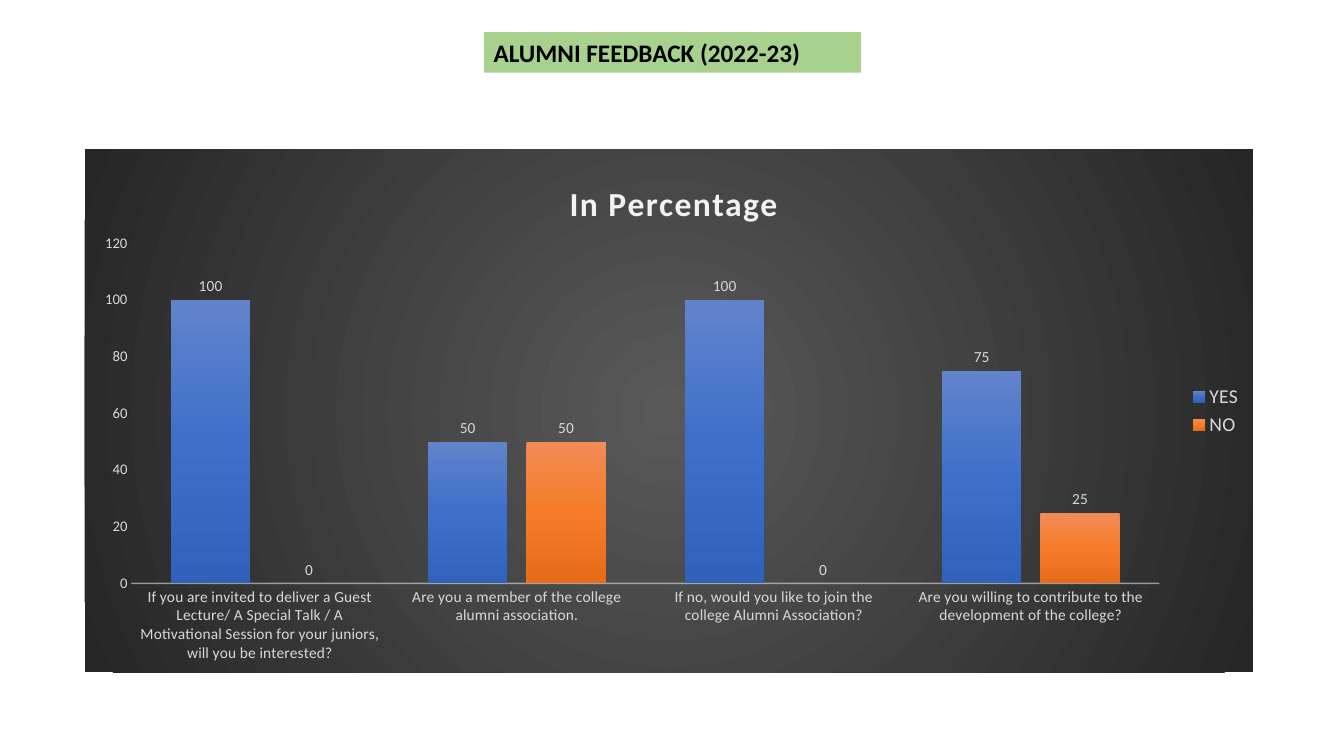
from pptx import Presentation
from pptx.chart.data import CategoryChartData
from pptx.dml.color import RGBColor
from pptx.enum.chart import XL_CHART_TYPE as ChartType, XL_LABEL_POSITION as LabelPos
from pptx.enum.chart import XL_LEGEND_POSITION as LegendPos, XL_TICK_MARK as Tick
from pptx.enum.shapes import MSO_SHAPE as Shape
from pptx.enum.text import MSO_ANCHOR as Anchor, MSO_AUTO_SIZE as AutoSize, PP_ALIGN as Align
from pptx.oxml import parse_xml
from pptx.oxml.ns import nsdecls
from pptx.util import Pt

BLACK = RGBColor(0x00, 0x00, 0x00)
GREEN = RGBColor(0xA9, 0xD1, 0x8E)
LIGHT = RGBColor(0xD9, 0xD9, 0xD9)
PALE = RGBColor(0xF2, 0xF2, 0xF2)
GREY = RGBColor(0x59, 0x59, 0x59)
DARK = RGBColor(0x26, 0x26, 0x26)
BLUES = (RGBColor(0x61, 0x83, 0xCB), RGBColor(0x3E, 0x70, 0xCA), RGBColor(0x30, 0x62, 0xBB))
ORANGES = (RGBColor(0xF1, 0x8C, 0x57), RGBColor(0xF6, 0x7B, 0x28), RGBColor(0xE5, 0x6C, 0x19))

LINEAR = '<a:lin ang="5400000" scaled="0"/>'
RADIAL = '<a:path path="circle"><a:fillToRect l="50000" t="50000" r="50000" b="50000"/></a:path>'

QUESTIONS = (
    "If you are invited to deliver a Guest Lecture/ A Special Talk / A Motivational Session "
    "for your juniors, will you be interested?",
    "Are you a member of the college alumni association.",
    "If no, would you like to join the college Alumni Association?",
    "Are you willing to contribute to the development of the college?",
)
ANSWERS = (
    ("YES", (100, 50, 100, 75), BLUES),
    ("NO", (0, 50, 0, 25), ORANGES),
)


def gradient(colors, direction):
    step = 100000 // (len(colors) - 1)
    stops = "".join(
        f'<a:gs pos="{i * step}"><a:srgbClr val="{c}"/></a:gs>' for i, c in enumerate(colors)
    )
    return parse_xml(
        f'<a:gradFill {nsdecls("a")} rotWithShape="1"><a:gsLst>{stops}</a:gsLst>{direction}</a:gradFill>'
    )


def set_layout(parent, index, **values):
    for old in parent.xpath("c:layout"):
        parent.remove(old)
    target = '<c:layoutTarget val="inner"/>' if "w" in values else ""
    modes = "".join(f'<c:{k}Mode val="edge"/>' for k in "xy")
    sizes = "".join(f'<c:{k} val="{v}"/>' for k, v in values.items())
    parent.insert(index, parse_xml(
        f'<c:layout {nsdecls("c")}><c:manualLayout>{target}{modes}{sizes}</c:manualLayout></c:layout>'
    ))


class Deck:
    font = "Calibri"

    def __init__(self, width, height):
        self.prs = Presentation()
        self.prs.slide_width, self.prs.slide_height = Pt(width), Pt(height)
        self.s = self.prs.slides.add_slide(self.prs.slide_layouts[6])

    def style(self, font, size, color, bold=False):
        font.name, font.size, font.bold = self.font, Pt(size), bold
        font.color.rgb = color

    def banner(self, text, x, y, w, h):
        sp = self.s.shapes.add_shape(Shape.RECTANGLE, Pt(x), Pt(y), Pt(w), Pt(h))
        sp.shadow.inherit = False
        sp.fill.solid()
        sp.fill.fore_color.rgb = GREEN
        sp.line.fill.background()
        tf = sp.text_frame
        tf.word_wrap = True
        tf.auto_size = AutoSize.SHAPE_TO_FIT_TEXT
        tf.vertical_anchor = Anchor.TOP
        p = tf.paragraphs[0]
        p.alignment = Align.LEFT
        r = p.add_run()
        r.text = text
        self.style(r.font, 18, BLACK, True)

    def column_chart(self, title, x, y, w, h):
        data = CategoryChartData()
        data.categories = QUESTIONS
        for name, values, _ in ANSWERS:
            data.add_series(name, values)
        chart = self.s.shapes.add_chart(
            ChartType.COLUMN_CLUSTERED, Pt(x), Pt(y), Pt(w), Pt(h), data
        ).chart
        self.style(chart.font, 10, BLACK)
        self.chart_background(chart)
        self.chart_title(chart, title)
        self.axes(chart)
        self.columns(chart.plots[0])
        chart.has_legend = True
        chart.legend.position = LegendPos.RIGHT
        chart.legend.include_in_layout = False
        self.style(chart.legend.font, 14, LIGHT)
        plot_area = chart.element.xpath("c:chart/c:plotArea")[0]
        set_layout(plot_area, 0, x=0.04, y=0.18, w=0.88, h=0.65)

    def chart_background(self, chart):
        sp_pr = parse_xml(f'<c:spPr {nsdecls("c", "a")}><a:ln><a:noFill/></a:ln></c:spPr>')
        sp_pr.insert(0, gradient((GREY, DARK), RADIAL))
        chart.element.xpath("c:txPr")[0].addprevious(sp_pr)

    def chart_title(self, chart, text):
        chart.has_title = True
        chart.chart_title.include_in_layout = False
        r = chart.chart_title.text_frame.paragraphs[0].add_run()
        r.text = text
        self.style(r.font, 24, PALE, True)
        r.font._element.set("spc", "100")
        set_layout(chart.element.xpath("c:chart/c:title")[0], 1, x=0.41, y=0.05)

    def axes(self, chart):
        for axis, size in ((chart.category_axis, 11), (chart.value_axis, 10.5)):
            axis.has_major_gridlines = False
            axis.major_tick_mark = axis.minor_tick_mark = Tick.NONE
            self.style(axis.tick_labels.font, size, LIGHT)
        chart.value_axis.minimum_scale = 0
        chart.value_axis.maximum_scale = 120
        chart.value_axis.major_unit = 20
        chart.value_axis.format.line.fill.background()
        line = chart.category_axis.format.line
        line.width = Pt(1)
        line.color.rgb = PALE
        color = chart.category_axis._element.xpath("c:spPr/a:ln/a:solidFill/a:srgbClr")[0]
        color.append(parse_xml(f'<a:alpha {nsdecls("a")} val="54000"/>'))

    def columns(self, plot):
        plot.vary_by_categories = False
        plot.gap_width, plot.overlap = 100, -24
        for series, (_, _, colors) in zip(plot.series, ANSWERS):
            series.invert_if_negative = False
            series._element.get_or_add_spPr().append(gradient(colors, LINEAR))
            labels = series.data_labels
            labels.show_value = True
            labels.position = LabelPos.OUTSIDE_END
            self.style(labels.font, 11, LIGHT)


def main():
    deck = Deck(960, 540)
    deck.banner("ALUMNI FEEDBACK (2022-23)", 345.6, 23, 269.3, 29)
    deck.column_chart("In Percentage", 60.5, 106.6, 834.5, 373.7)
    deck.prs.save("out.pptx")


if __name__ == "__main__":
    main()
